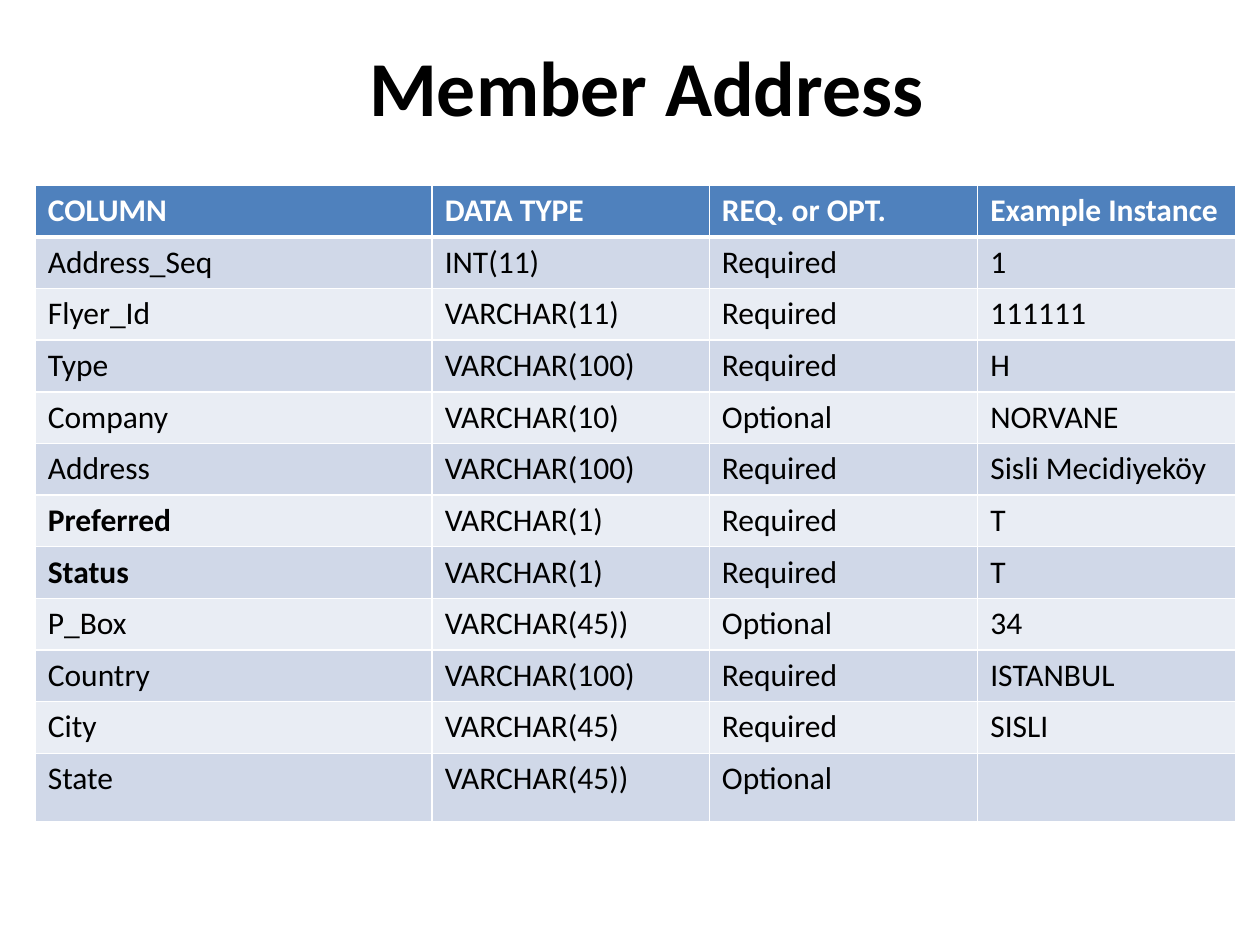
from dataclasses import dataclass

from lxml import etree
from pptx import Presentation
from pptx.dml.color import RGBColor
from pptx.enum.text import MSO_ANCHOR, PP_ALIGN
from pptx.oxml.ns import qn
from pptx.util import Inches, Pt

TOP = MSO_ANCHOR.TOP
CENTER = PP_ALIGN.CENTER
TITLE_ONLY = 5


@dataclass(frozen=True)
class Theme:
    font: str = "Calibri"
    title_size: float = 44.4
    table_size: float = 18
    text: str = "000000"
    header_text: str = "FFFFFF"
    header_fill: str = "4F81BD"
    band_fills: tuple = ("D0D8E8", "E9EDF4")
    border: str = "FFFFFF"
    thin: float = 1
    thick: float = 3


COLUMN_WIDTHS = (3.15, 2.2, 2.13, 2.05)
ROW_HEIGHT = 0.41
LAST_ROW_HEIGHT = 0.54
BOLD_COLUMNS = {"Preferred", "Status"}
ADDRESS_ROWS = [
    ("COLUMN", "DATA TYPE", "REQ. or OPT.", "Example Instance"),
    ("Address_Seq", "INT(11)", "Required", "1"),
    ("Flyer_Id", "VARCHAR(11)", "Required", "111111"),
    ("Type", "VARCHAR(100)", "Required", "H"),
    ("Company", "VARCHAR(10)", "Optional", "NORVANE"),
    ("Address", "VARCHAR(100)", "Required", "Sisli Mecidiyeköy"),
    ("Preferred", "VARCHAR(1)", "Required", "T"),
    ("Status", "VARCHAR(1)", "Required", "T"),
    ("P_Box", "VARCHAR(45))", "Optional", "34"),
    ("Country", "VARCHAR(100)", "Required", "ISTANBUL"),
    ("City", "VARCHAR(45)", "Required", "SISLI"),
    ("State", "VARCHAR(45))", "Optional", ""),
]


class PageBuilder:
    def __init__(self, page, theme):
        self.page = page
        self.theme = theme

    def style_font(self, font, size, color, bold):
        font.name = self.theme.font
        font.size = Pt(size)
        font.bold = bold
        font.color.rgb = RGBColor.from_string(color)

    def title(self, text, left, top, width, height):
        box = self.page.shapes.title
        box.left, box.top = Inches(left), Inches(top)
        box.width, box.height = Inches(width), Inches(height)
        frame = box.text_frame
        frame.text = text
        frame.vertical_anchor = TOP
        frame.margin_top = Inches(0.02)
        para = frame.paragraphs[0]
        para.alignment = CENTER
        self.style_font(para.font, self.theme.title_size, self.theme.text, True)

    def cell_borders(self, cell, top, bottom):
        """Draw all four edges; must run before the cell is filled."""
        properties = cell._tc.get_or_add_tcPr()
        thin = self.theme.thin
        for edge, width in (("L", thin), ("R", thin), ("T", top), ("B", bottom)):
            line = etree.SubElement(properties, qn(f"a:ln{edge}"), w=str(Pt(width)))
            fill = etree.SubElement(line, qn("a:solidFill"))
            etree.SubElement(fill, qn("a:srgbClr"), val=self.theme.border)

    def cell(self, cell, text, row_index, bold):
        theme = self.theme
        is_header = row_index == 0
        self.cell_borders(
            cell,
            top=theme.thick if row_index == 1 else theme.thin,
            bottom=theme.thick if is_header else theme.thin,
        )
        fill = theme.header_fill if is_header else theme.band_fills[(row_index - 1) % 2]
        cell.fill.solid()
        cell.fill.fore_color.rgb = RGBColor.from_string(fill)
        cell.text = text
        color = theme.header_text if is_header else theme.text
        self.style_font(cell.text_frame.paragraphs[0].font, theme.table_size, color, bold)

    def table(self, rows, left, top, widths, heights):
        table = self.page.shapes.add_table(
            len(rows), len(widths), Inches(left), Inches(top),
            Inches(sum(widths)), Inches(sum(heights)),
        ).table
        for column, width in zip(table.columns, widths):
            column.width = Inches(width)
        for row_index, values in enumerate(rows):
            table.rows[row_index].height = Inches(heights[row_index])
            for column_index, text in enumerate(values):
                bold = row_index == 0 or text in BOLD_COLUMNS
                self.cell(table.cell(row_index, column_index), text, row_index, bold)


def main():
    deck = Presentation()
    deck.slide_width, deck.slide_height = Inches(10), Inches(7.5)
    page = deck.slides.add_slide(deck.slide_layouts[TITLE_ONLY])
    builder = PageBuilder(page, Theme())
    builder.title("Member Address", 0.88, 0.29, 8.5, 1.42)
    heights = [ROW_HEIGHT] * (len(ADDRESS_ROWS) - 1) + [LAST_ROW_HEIGHT]
    builder.table(ADDRESS_ROWS, 0.28, 1.47, COLUMN_WIDTHS, heights)
    deck.save("out.pptx")


if __name__ == "__main__":
    main()
